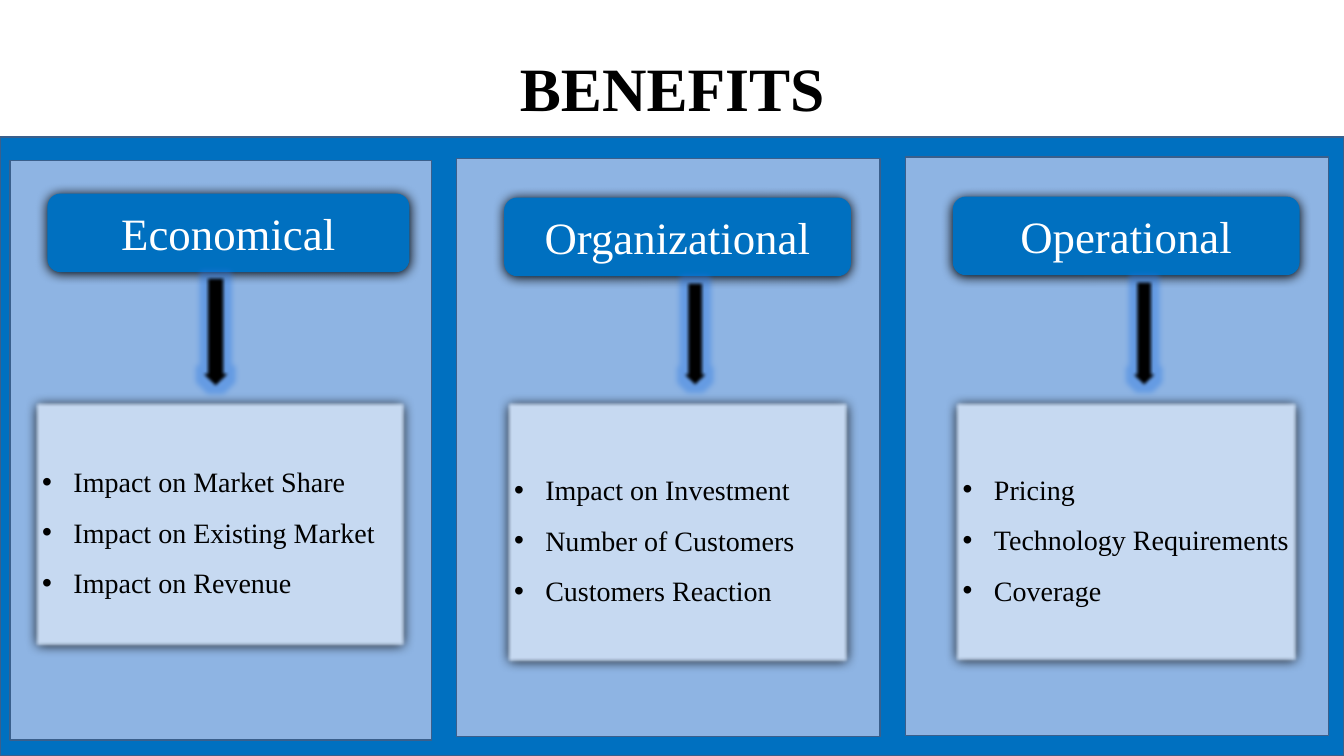
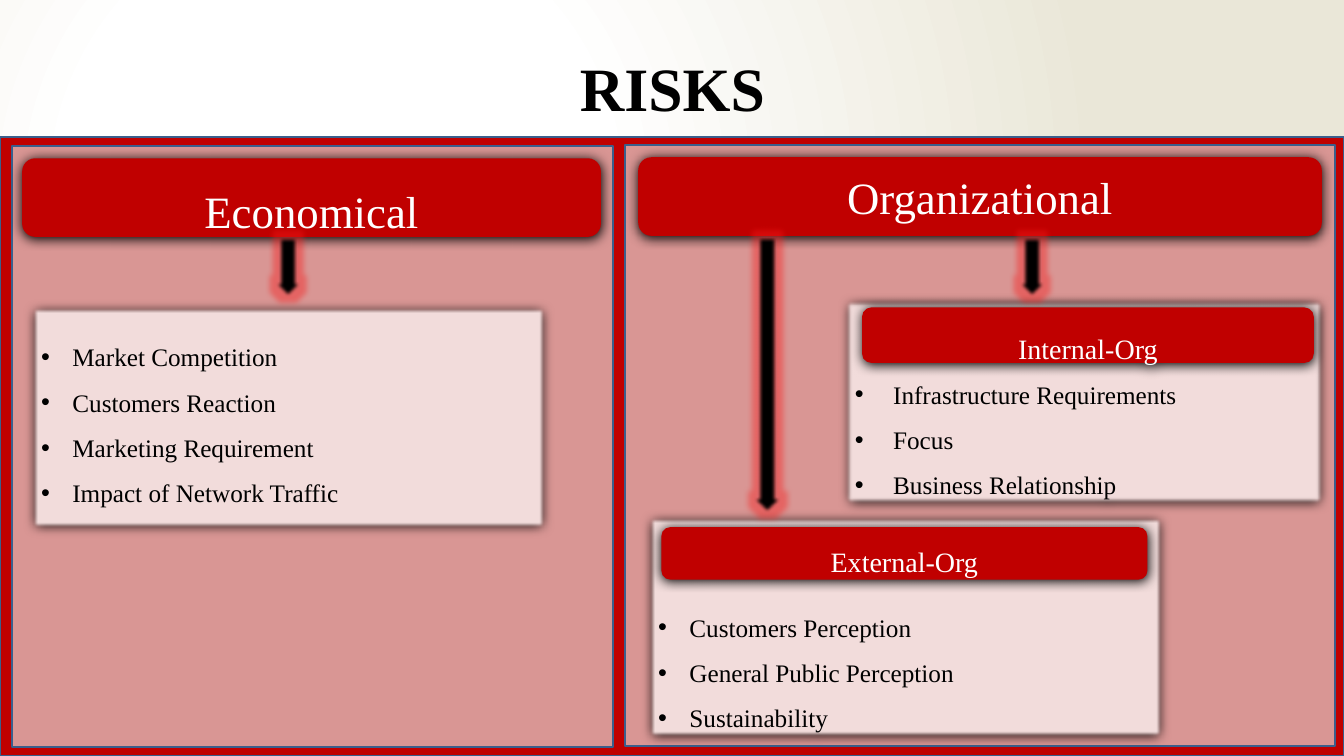
import pptx
import pptx.dml.color
import pptx.enum.shapes
import pptx.enum.text
import pptx.oxml
import pptx.oxml.ns
import pptx.util

Inches = pptx.util.Inches
Pt = pptx.util.Pt
RGBColor = pptx.dml.color.RGBColor
MSO_SHAPE = pptx.enum.shapes.MSO_SHAPE
ANCHOR = pptx.enum.text.MSO_ANCHOR
ALIGN = pptx.enum.text.PP_ALIGN

FONT = "Times New Roman"
WIDTH, HEIGHT, BAND_TOP = 13.33, 7.5, 1.36
BLACK = RGBColor(0x00, 0x00, 0x00)
WHITE = RGBColor(0xFF, 0xFF, 0xFF)
CREAM = RGBColor(0xEA, 0xE7, 0xD8)
OUTLINE = RGBColor(0x3A, 0x5F, 0x8C)
BLUE = {
    "strong": RGBColor(0x00, 0x70, 0xC0),
    "panel": RGBColor(0x8E, 0xB4, 0xE3),
    "card": RGBColor(0xC6, 0xD9, 0xF1),
    "glow": RGBColor(0x28, 0x78, 0xE5),
}
RED = {
    "strong": RGBColor(0xC0, 0x00, 0x00),
    "panel": RGBColor(0xD9, 0x96, 0x94),
    "card": RGBColor(0xF2, 0xDC, 0xDB),
    "glow": RGBColor(0xF8, 0x1B, 0x1A),
}

# Content: places are (left, top, width, height) in inches
SLIDES = [
    {
        "title": "BENEFITS", "palette": BLUE, "gradient": False, "card_size": 20,
        "panels": [(0.1, 1.59, 4.18, 5.75), (4.53, 1.57, 4.2, 5.74), (8.98, 1.56, 4.2, 5.74)],
        "cards": [
            {"place": (0.32, 3.96, 3.72, 2.47),
             "items": ["Impact on Market Share", "Impact on Existing Market", "Impact on Revenue"]},
            {"place": (5, 3.96, 3.44, 2.63),
             "items": ["Impact on Investment", "Number of Customers", "Customers Reaction"]},
            {"place": (9.45, 3.96, 3.44, 2.62),
             "items": ["Pricing", "Technology Requirements", "Coverage"]},
        ],
        "headings": [
            {"text": "Economical", "place": (0.47, 1.92, 3.59, 0.78)},
            {"text": "Organizational", "place": (5, 1.96, 3.44, 0.78)},
            {"text": "Operational", "place": (9.45, 1.95, 3.44, 0.78)},
        ],
        "arrows": [(1.94, 2.74, 0.4, 1.14), (6.71, 2.79, 0.37, 1.08), (11.16, 2.78, 0.37, 1.09)],
    },
    {
        "title": "RISKS", "palette": RED, "gradient": True, "card_size": 18,
        "panels": [(0.12, 1.45, 5.96, 5.96), (6.2, 1.44, 7.04, 5.96)],
        "cards": [
            {"place": (0.31, 3.04, 5.1, 2.2),
             "items": ["Market Competition", "Customers Reaction",
                       "Marketing Requirement", "Impact of Network Traffic"]},
            {"place": (8.38, 2.97, 4.75, 2.04), "anchor": ANCHOR.BOTTOM, "indent": 0.38,
             "items": ["Infrastructure Requirements", "Focus", "Business Relationship"]},
            {"place": (6.43, 5.12, 5.1, 2.2), "anchor": ANCHOR.BOTTOM,
             "items": ["Customers Perception", "General Public Perception", "Sustainability"]},
        ],
        "headings": [
            {"text": "Economical", "place": (0.22, 1.57, 5.74, 0.78), "spacing": 1.5},
            {"text": "Organizational", "place": (6.33, 1.56, 6.78, 0.78)},
            {"text": "Internal-Org", "place": (8.55, 3.05, 4.48, 0.55), "size": 20,
             "spacing": 1.5, "anchor": ANCHOR.TOP},
            {"text": "External-Org", "place": (6.56, 5.23, 4.82, 0.52), "size": 20, "spacing": 1.5},
        ],
        "arrows": [(left, 2.35, 0.37, height)
                   for left, height in ((2.67, 0.62), (7.42, 2.76), (10.05, 0.62))],
    },
]


def parse(markup):
    head, rest = markup.split(" ", 1)
    return pptx.oxml.parse_xml(f"{head} {pptx.oxml.ns.nsdecls('a')} {rest}")


def set_effects(shape, glow=None, shadow=False, soft=False):
    effects = ""
    if glow is not None:
        effects += (f'<a:glow rad="{Pt(8)}"><a:srgbClr val="{glow}">'
                    '<a:alpha val="40000"/></a:srgbClr></a:glow>')
    if shadow:
        effects += (f'<a:outerShdw blurRad="{Pt(8.5)}" dist="{Pt(1)}" dir="5400000" '
                    f'rotWithShape="0"><a:srgbClr val="{BLACK}"/></a:outerShdw>')
    if soft:
        effects += f'<a:softEdge rad="{Pt(2.5)}"/>'
    properties = shape.element.spPr
    properties.remove(properties.find(pptx.oxml.ns.qn("a:effectLst")))
    properties.append(parse(f"<a:effectLst >{effects}</a:effectLst>"))


def add_block(slide, kind, place, fill, outlined=False, **effects):
    shape = slide.shapes.add_shape(kind, *map(Inches, place))
    shape.shadow.inherit = False
    shape.fill.solid()
    shape.fill.fore_color.rgb = fill
    if outlined:
        shape.line.color.rgb = OUTLINE
        shape.line.width = Pt(1)
    else:
        shape.line.fill.background()
    if effects:
        set_effects(shape, **effects)
    return shape


def write(shape, lines, size, color, spacing=1.0, align=ALIGN.CENTER,
          anchor=ANCHOR.MIDDLE, bold=False, indent=None):
    frame = shape.text_frame
    frame.word_wrap = True
    frame.vertical_anchor = anchor
    font_format = {"name": FONT, "size": Pt(size), "bold": bold}
    for index, line in enumerate(lines):
        paragraph = frame.add_paragraph() if index else frame.paragraphs[0]
        for name, value in {"alignment": align, "line_spacing": spacing}.items():
            setattr(paragraph, name, value)
        run = paragraph.add_run()
        run.text = line
        for name, value in font_format.items():
            setattr(run.font, name, value)
        run.font.color.rgb = color
        if indent:
            properties = paragraph._p.get_or_add_pPr()
            properties.set("marL", str(Inches(indent)))
            properties.set("indent", str(-Inches(indent)))
            properties.append(parse('<a:buFont typeface="Arial"/>'))
            properties.append(parse('<a:buChar char="•"/>'))


def set_background(slide, gradient):
    fill = slide.background.fill
    if not gradient:
        fill.solid()
        fill.fore_color.rgb = WHITE
        return
    fill.gradient()
    for stop, position, color in zip(fill.gradient_stops, (0.34, 1), (WHITE, CREAM)):
        stop.position = position
        stop.color.rgb = color
    element = slide.element.find(".//" + pptx.oxml.ns.qn("a:gradFill"))
    element.replace(
        element.find(pptx.oxml.ns.qn("a:lin")),
        parse('<a:path path="circle"><a:fillToRect l="50000" t="50000" '
              'r="100000" b="100000"/></a:path>'))


def build_slide(presentation, content):
    slide = presentation.slides.add_slide(presentation.slide_layouts[6])
    palette = content["palette"]
    set_background(slide, content["gradient"])

    # Title, band and panels
    title = slide.shapes.add_textbox(*map(Inches, (0.92, 0.18, 11.5, 1.45)))
    write(title, [content["title"]], 44, BLACK, spacing=0.9, bold=True)
    band = (0, BAND_TOP, WIDTH, HEIGHT - BAND_TOP)
    add_block(slide, MSO_SHAPE.RECTANGLE, band, palette["strong"], outlined=True)
    for place in content["panels"]:
        add_block(slide, MSO_SHAPE.RECTANGLE, place, palette["panel"], outlined=True)

    # Bulleted cards
    for card in content["cards"]:
        shape = add_block(slide, MSO_SHAPE.RECTANGLE, card["place"], palette["card"],
                          shadow=True, soft=True)
        write(shape, card["items"], content["card_size"], BLACK, spacing=1.5,
              align=ALIGN.LEFT, anchor=card.get("anchor", ANCHOR.MIDDLE),
              indent=card.get("indent", 0.31))

    # Headings
    for heading in content["headings"]:
        shape = add_block(slide, MSO_SHAPE.ROUNDED_RECTANGLE, heading["place"],
                          palette["strong"], shadow=True)
        write(shape, [heading["text"]], heading.get("size", 32), WHITE,
              spacing=heading.get("spacing", 1.0),
              anchor=heading.get("anchor", ANCHOR.MIDDLE))

    # Arrows
    for place in content["arrows"]:
        add_block(slide, MSO_SHAPE.DOWN_ARROW, place, BLACK, outlined=True,
                  glow=palette["glow"], soft=True)


def main():
    presentation = pptx.Presentation()
    presentation.slide_width = Inches(WIDTH)
    presentation.slide_height = Inches(HEIGHT)
    for content in SLIDES:
        build_slide(presentation, content)
    presentation.save("out.pptx")


if __name__ == "__main__":
    main()
